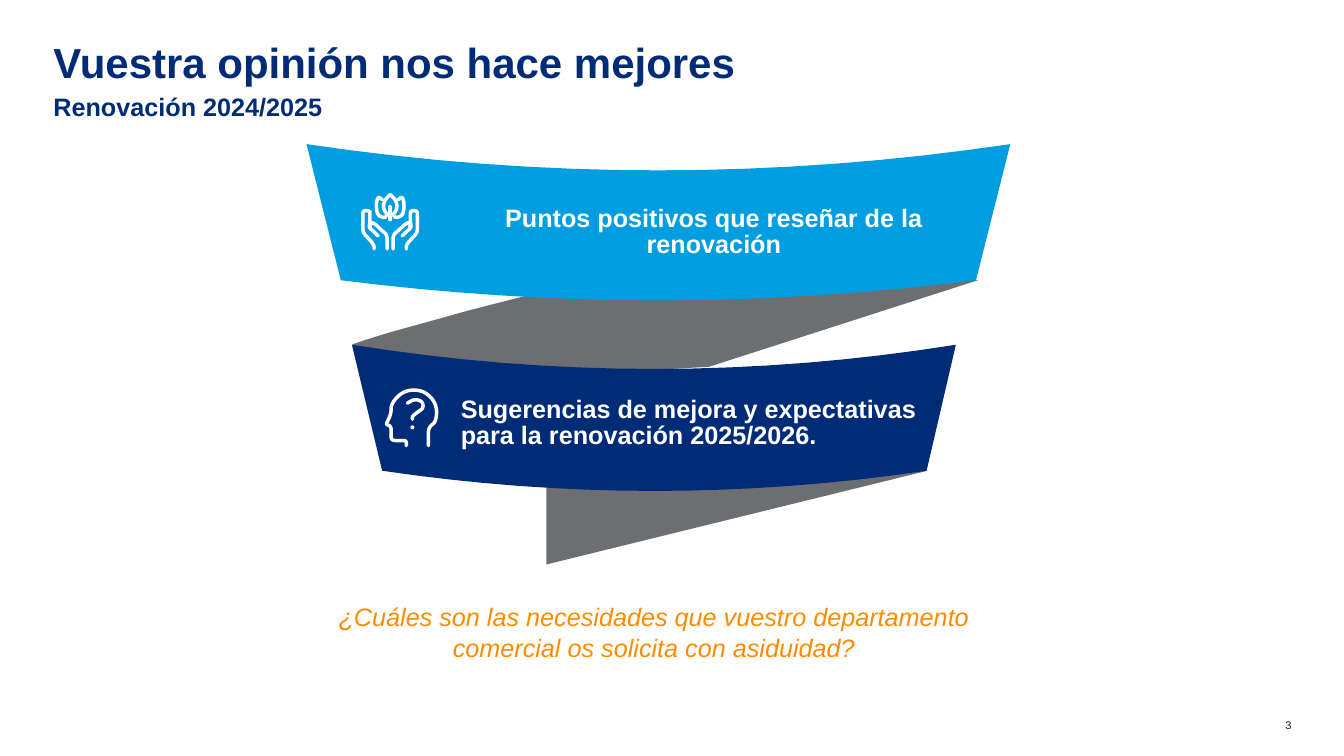
from dataclasses import dataclass

from pptx import Presentation
from pptx.dml.color import RGBColor as Rgb
from pptx.enum.shapes import MSO_SHAPE as Shape
from pptx.enum.text import MSO_ANCHOR as Anchor, PP_ALIGN as Align
from pptx.oxml.ns import qn
from pptx.util import Pt

PX = 9144  # EMU in one px, a hundredth of an inch


@dataclass(frozen=True)
class Theme:
    font: str = "Arial"
    navy: str = "002C77"
    sky: str = "009DE0"
    gray: str = "6D6E71"
    white: str = "FFFFFF"
    ink: str = "202020"
    amber: str = "FF8C00"
    title: int = 30
    body: int = 18
    small: int = 8
    stroke: float = 2.5


def smooth(points, rounds=3):
    """Round the corners of an open line, keeping its two ends."""
    for _ in range(rounds):
        cut = [points[0]]
        for (ax, ay), (bx, by) in zip(points, points[1:]):
            cut += [(ax * 0.75 + bx * 0.25, ay * 0.75 + by * 0.25),
                    (ax * 0.25 + bx * 0.75, ay * 0.25 + by * 0.75)]
        points = cut + [points[-1]]
    return points


def mirror(lines, axis):
    return [[(2 * axis - x, y) for x, y in line] for line in lines]


def sag(left, right, top, depth, steps=16):
    """Points of a hanging edge, from left to right."""
    ticks = [2 * i / steps - 1 for i in range(steps + 1)]
    return [(left + (right - left) * (t + 1) / 2, top + depth * (1 - t * t))
            for t in ticks]


class Deck:
    def __init__(self, theme):
        self.theme = theme
        self.file = Presentation()
        self.file.slide_width = 1333 * PX
        self.file.slide_height = 750 * PX
        self.shapes = self.file.slides.add_slide(self.file.slide_layouts[6]).shapes

    def text(self, words, box, size, color, bold=False, italic=False,
             align=Align.LEFT, anchor=Anchor.TOP, space=1.0):
        frame = self.shapes.add_textbox(*(n * PX for n in box)).text_frame
        frame.word_wrap = True
        frame.vertical_anchor = anchor
        frame.margin_left = frame.margin_right = 0
        frame.margin_top = frame.margin_bottom = 0
        para = frame.paragraphs[0]
        para.alignment = align
        para.line_spacing = space
        run = para.add_run()
        run.text = words
        font = run.font
        font.name, font.size = self.theme.font, Pt(size)
        font.bold, font.italic = bold, italic
        font.color.rgb = Rgb.from_string(color)

    def trace(self, lines, close):
        """Make one freeform out of several lines."""
        lines = [[(x * PX, y * PX) for x, y in line] for line in lines]
        pen = self.shapes.build_freeform(*lines[0][0])
        for i, line in enumerate(lines):
            if i:
                pen.move_to(*line[0])
            pen.add_line_segments(line[1:], close=close)
        shape = pen.convert_to_shape()
        shape.shadow.inherit = False
        return shape

    def paint(self, shape, color):
        shape.shadow.inherit = False
        shape.fill.solid()
        shape.fill.fore_color.rgb = Rgb.from_string(color)
        shape.line.fill.background()

    def area(self, points, color):
        self.paint(self.trace([points], True), color)

    def band(self, top, base, color):
        self.area(sag(*top) + sag(*base)[::-1], color)

    def sketch(self, lines):
        """Draw the white strokes of an icon."""
        shape = self.trace([smooth(line) for line in lines], False)
        shape.fill.background()
        shape.line.width = Pt(self.theme.stroke)
        shape.line.color.rgb = Rgb.from_string(self.theme.white)
        shape.element.spPr.find(qn("a:ln")).set("cap", "rnd")

    def dot(self, x, y, size):
        shape = self.shapes.add_shape(Shape.OVAL, x * PX, y * PX, size * PX, size * PX)
        self.paint(shape, self.theme.white)


FOLDS = [
    [(349, 342), (360, 338), (386, 330), (422, 320), (465, 308), (543, 288),
     (580, 279), (970, 278), (703, 364), (498, 375)],
    [(542, 481), (542, 560), (920, 467)],
]
AXIS = 387
HAND = [
    [(371, 247), (371, 243), (366, 237), (360, 231), (360, 222), (360, 214),
     (360, 209), (367, 209), (367, 214), (367, 220), (366, 226), (370, 229), (375, 234)],
    [(367, 226), (368, 220), (373, 223), (378, 228), (384, 233), (384, 240), (384, 247)],
]
PETALS = [
    [(387, 193), (381, 199), (380, 207), (384, 213), (387, 214)],
    [(379, 198), (375, 195), (373, 202), (374, 213), (380, 216), (383, 215)],
]
STEM = [[(387, 205), (387, 218)]]
HEAD = [[(403, 442), (403, 437), (397, 437), (388, 437), (388, 430), (388, 423),
         (383, 421), (384, 419), (388, 410), (388, 400), (401, 387), (420, 387),
         (433, 400), (433, 418), (425, 424), (425, 433), (425, 442)]]
QUERY = [[(404, 400), (411, 396), (419, 398), (420, 405), (414, 409),
          (409, 413), (409, 416)]]


def main():
    theme = Theme()
    deck = Deck(theme)
    deck.text("Vuestra opinión nos hace mejores", (53, 39, 1227, 54),
              theme.title, theme.navy, bold=True, anchor=Anchor.MIDDLE, space=0.8)
    deck.text("3", (1250, 713, 31, 13), theme.small, theme.ink, align=Align.RIGHT)
    deck.text("Renovación 2024/2025", (53, 88, 1228, 35),
              theme.body, theme.navy, bold=True, anchor=Anchor.MIDDLE)
    for fold in FOLDS:
        deck.area(fold, theme.gray)
    deck.band((304, 1002, 143, 26), (338, 968, 278, 20), theme.sky)
    deck.band((349, 948, 342, 24), (379, 919, 467, 20), theme.navy)
    deck.text("Puntos positivos que reseñar de la renovación", (444, 205, 528, 52),
              theme.body, theme.white, bold=True, align=Align.CENTER, space=0.86)
    for icon in (HAND, mirror(HAND, AXIS), PETALS + mirror(PETALS, AXIS) + STEM):
        deck.sketch(icon)
    deck.text("Sugerencias de mejora y expectativas para la renovación 2025/2026.",
              (457, 395, 472, 52), theme.body, theme.white, bold=True, space=0.86)
    deck.sketch(HEAD)
    deck.dot(407, 422, 4)
    deck.sketch(QUERY)
    deck.text("¿Cuáles son las necesidades que vuestro departamento comercial "
              "os solicita con asiduidad?", (333, 597, 631, 61),
              theme.body, theme.amber, italic=True, align=Align.CENTER)
    deck.file.save("out.pptx")


if __name__ == "__main__":
    main()
